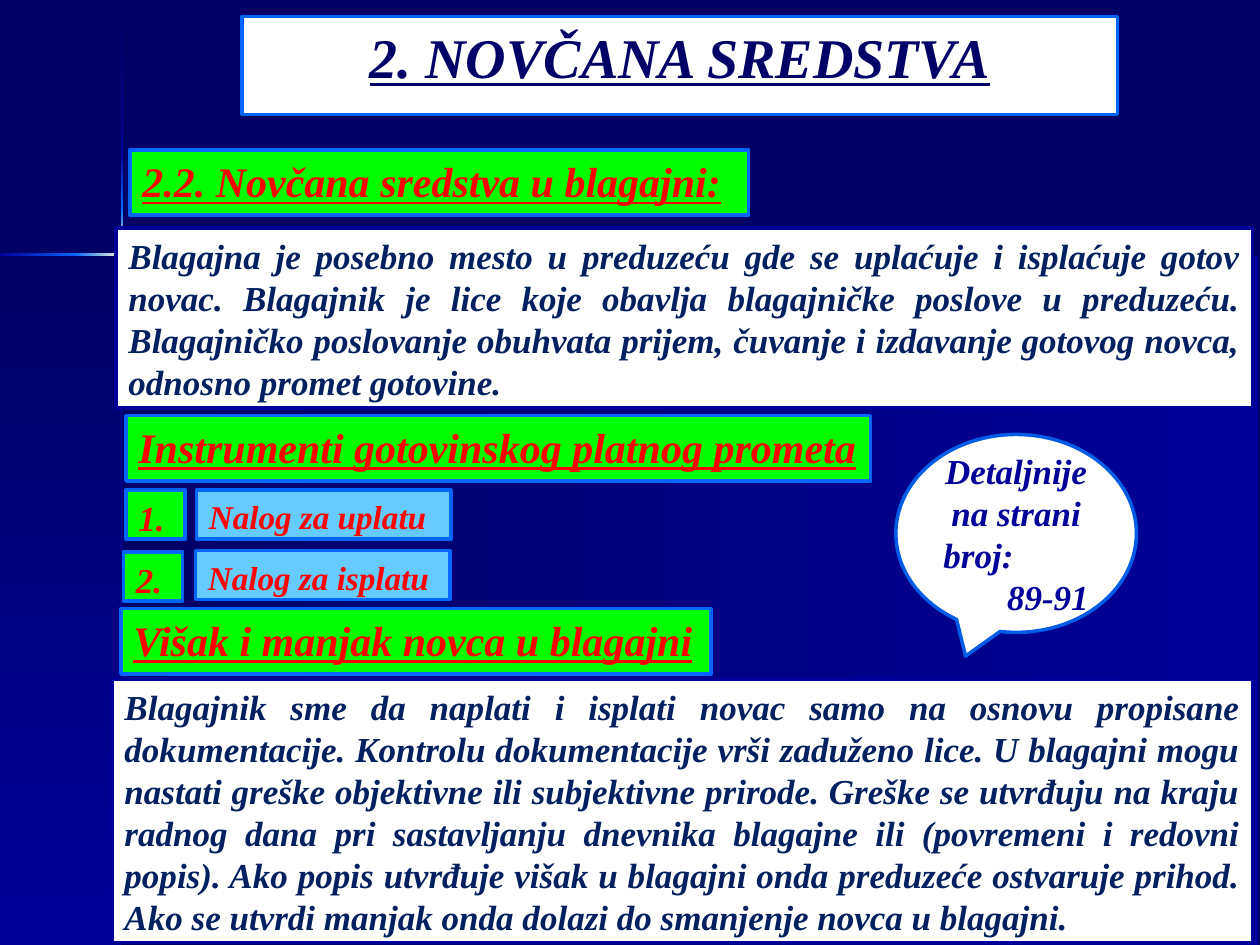
import copy

import pptx
import pptx.dml.color
import pptx.enum.shapes
import pptx.enum.text
import pptx.util

Cm = pptx.util.Cm
SHAPES = pptx.enum.shapes.MSO_SHAPE
ALIGN = pptx.enum.text.PP_ALIGN
ANCHOR = pptx.enum.text.MSO_ANCHOR

COLOURS = {
    "night": "000066",
    "navy": "000099",
    "blue": "0066FF",
    "callout blue": "005CE7",
    "glow": "FFFFCC",
    "white": "FFFFFF",
    "green": "00FF00",
    "sky": "66CCFF",
    "red": "FF0000",
    "ink": "002060",
}

# Looks of the text boxes
STYLES = {
    "title": dict(fill="white", line="blue", colour="night", size=32,
                  underline=True, align=ALIGN.CENTER),
    "heading": dict(fill="green", line="blue", colour="red", size=24,
                    underline=True, align=ALIGN.LEFT),
    "body": dict(fill="white", line="navy", colour="ink", size=20,
                 underline=None, align=ALIGN.JUSTIFY),
    "number": dict(fill="green", line="blue", colour="red", size=20,
                   underline=None, align=ALIGN.LEFT),
    "item": dict(fill="sky", line="blue", colour="red", size=19,
                 underline=None, align=ALIGN.LEFT),
    "callout": dict(fill="white", line="callout blue", colour="navy", size=20,
                    underline=None, align=ALIGN.CENTER),
}

# Background: position in cm, colours along the gradient, direction
DOWN, ACROSS = 270, 0
GLOW = ("blue", "glow", "blue")
BACKGROUND = [
    ((2.46, 5.13, 22.91, 13.92), ("night", "navy"), ACROSS),
    ((0, 5.13, 2.46, 13.92), ("night", "navy"), DOWN),
    ((2.44, 0.03, 0.05, 3.05), ("night", "navy"), DOWN),
    ((2.44, 7.16, 0.05, 11.89), ("navy", "night"), DOWN),
    ((4.5, 5.11, 20.88, 0.05), ("navy", "night"), ACROSS),
    ((2.44, 3.07, 0.05, 1.12), ("navy", "blue"), DOWN),
    ((2.44, 4.19, 0.05, 1.85), GLOW, DOWN),
    ((0, 5.11, 1.55, 0.05), ("navy", "blue"), ACROSS),
    ((1.52, 5.11, 1.85, 0.05), GLOW, ACROSS),
]

# Text boxes: style, position in cm, text
BOXES = [
    ("title", (4.88, 0.33, 17.65, 1.98), "2. NOVČANA SREDSTVA"),
    ("heading", (2.62, 3.02, 12.47, 1.32), "2.2. Novčana sredstva u blagajni:"),
    ("body", (2.34, 4.6, 22.91, 3.63),
     "Blagajna je posebno mesto u preduzeću gde se uplaćuje i isplaćuje gotov "
     "novac. Blagajnik je lice koje obavlja blagajničke poslove u preduzeću. "
     "Blagajničko poslovanje obuhvata prijem, čuvanje i izdavanje gotovog novca, "
     "odnosno promet gotovine."),
    ("heading", (2.54, 8.38, 15.01, 1.32), "Instrumenti gotovinskog platnog prometa"),
    ("number", (2.54, 9.88, 1.19, 0.99), "1."),
    ("number", (2.49, 11.13, 1.19, 0.99), "2."),
    ("item", (3.96, 9.88, 5.13, 0.99), "Nalog za uplatu"),
    ("item", (3.94, 11.1, 5.13, 0.99), "Nalog za isplatu"),
    ("body", (2.26, 13.69, 22.99, 5.31),
     "Blagajnik sme da naplati i isplati novac samo na osnovu propisane "
     "dokumentacije. Kontrolu dokumentacije vrši zaduženo lice. U blagajni mogu "
     "nastati greške objektivne ili subjektivne prirode. Greške se utvrđuju na "
     "kraju radnog dana pri sastavljanju dnevnika blagajne ili (povremeni i "
     "redovni popis). Ako popis utvrđuje višak u blagajni onda preduzeće "
     "ostvaruje prihod. Ako se utvrdi manjak onda dolazi do smanjenje novca u "
     "blagajni."),
    ("heading", (2.44, 12.27, 11.89, 1.32), "Višak i manjak novca u blagajni"),
]


def rgb(name):
    return pptx.dml.color.RGBColor.from_string(COLOURS[name])


def set_attributes(target, values):
    for name, value in values.items():
        setattr(target, name, value)


def add_plain_shape(slide, kind, position):
    shape = slide.shapes.add_shape(kind, *[Cm(length) for length in position])
    shape.shadow.inherit = False
    return shape


def add_gradient_bar(slide, position, colours, angle):
    shape = add_plain_shape(slide, SHAPES.RECTANGLE, position)
    shape.line.fill.background()
    shape.fill.gradient()
    shape.fill.gradient_angle = angle
    # A middle stop is added by copying the first one
    stop_list = shape._element.spPr.find(".//" + pptx.oxml.ns.qn("a:gsLst"))
    for _ in colours[2:]:
        stop_list.insert(1, copy.deepcopy(stop_list[0]))
    for index, (stop, colour) in enumerate(zip(shape.fill.gradient_stops, colours)):
        stop.color.rgb = rgb(colour)
        stop.position = index / (len(colours) - 1)


def add_text_box(slide, style_name, position, text, kind=SHAPES.RECTANGLE,
                 anchor=ANCHOR.TOP):
    style = STYLES[style_name]
    shape = add_plain_shape(slide, kind, position)
    shape.fill.solid()
    shape.fill.fore_color.rgb = rgb(style["fill"])
    shape.line.color.rgb = rgb(style["line"])
    shape.line.width = pptx.util.Pt(2)
    frame = shape.text_frame
    set_attributes(frame, {"text": text, "word_wrap": True, "vertical_anchor": anchor})
    for paragraph in frame.paragraphs:
        paragraph.alignment = style["align"]
        font = paragraph.runs[0].font
        set_attributes(font, {
            "name": "Times New Roman",
            "size": pptx.util.Pt(style["size"]),
            "bold": True,
            "italic": True,
            "underline": style["underline"],
        })
        font.color.rgb = rgb(style["colour"])
    return shape


def add_callout(slide):
    shape = add_text_box(slide, "callout", (18.06, 8.76, 4.85, 3.99),
                         "Detaljnije na strani\nbroj:\n89-91",
                         SHAPES.OVAL_CALLOUT, ANCHOR.MIDDLE)
    # Tip of the pointer, measured from the centre
    shape.adjustments[0] = -0.21
    shape.adjustments[1] = 0.62
    alignments = (ALIGN.CENTER, ALIGN.LEFT, ALIGN.RIGHT)
    for paragraph, alignment in zip(shape.text_frame.paragraphs, alignments):
        paragraph.alignment = alignment


def main():
    presentation = pptx.Presentation()
    set_attributes(presentation, {"slide_width": Cm(25.4), "slide_height": Cm(19.05)})
    slide = presentation.slides.add_slide(presentation.slide_layouts[6])

    # Background
    slide.background.fill.solid()
    slide.background.fill.fore_color.rgb = rgb("night")
    for bar in BACKGROUND:
        add_gradient_bar(slide, *bar)

    # Content
    for box in BOXES:
        add_text_box(slide, *box)
    add_callout(slide)

    presentation.save("out.pptx")


if __name__ == "__main__":
    main()
